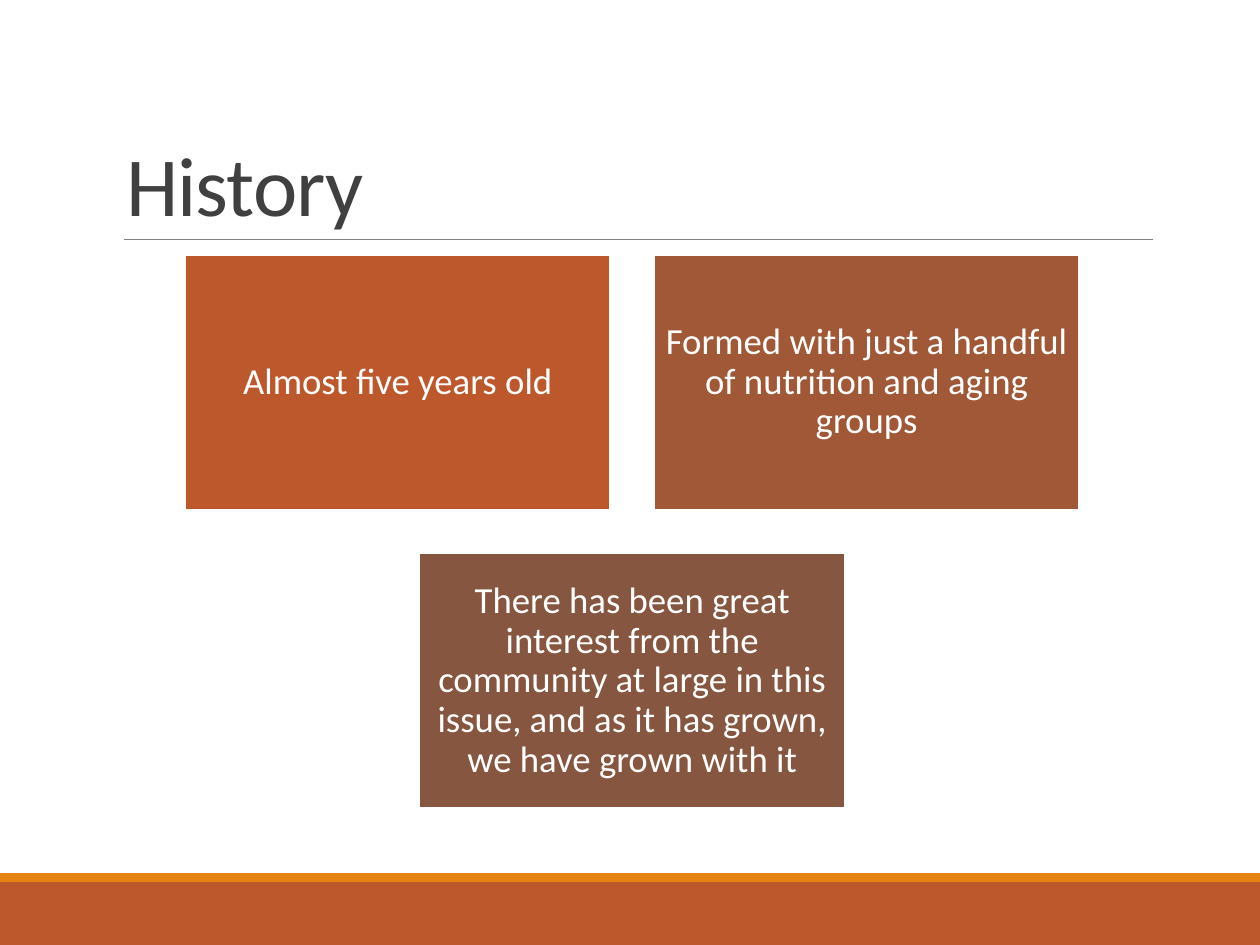
"""Build the History slide with three text cards and a footer band."""
from dataclasses import dataclass

from lxml import etree
from pptx import Presentation
from pptx.dml.color import RGBColor
from pptx.enum.shapes import MSO_CONNECTOR, MSO_SHAPE
from pptx.enum.text import MSO_ANCHOR, MSO_AUTO_SIZE, PP_ALIGN
from pptx.oxml.ns import qn
from pptx.util import Cm, Pt

RECT = MSO_SHAPE.RECTANGLE
STRAIGHT = MSO_CONNECTOR.STRAIGHT
MIDDLE, BOTTOM = MSO_ANCHOR.MIDDLE, MSO_ANCHOR.BOTTOM
CENTER, LEFT = PP_ALIGN.CENTER, PP_ALIGN.LEFT
NO_FIT = MSO_AUTO_SIZE.NONE

COLORS = {
    "rust": "BD582C", "amber": "E48312", "clay": "A05837", "brown": "865640",
    "white": "FFFFFF", "rule": "808080", "title": "404040",
}
WIDE, HIGH = 25.4, 19.05
CARD_W, CARD_H = 8.58, 5.15
STEP_X, STEP_Y = 9.45, 6.02
CARD_X, CARD_Y = 3.73, 5.13
INSET = Cm(0.22)
FRAME = {"word_wrap": True, "auto_size": NO_FIT}
INSETS = dict.fromkeys(
    ("margin_left", "margin_right", "margin_top", "margin_bottom"), INSET)


@dataclass
class Card:
    """A text card placed by column and row of the grid."""
    text: str
    fill: str
    col: float
    row: int


@dataclass
class Band:
    """A full-width footer band."""
    top: float
    high: float
    fill: str


CARDS = [
    Card("Almost five years old", "rust", 0, 0),
    Card("Formed with just a handful of nutrition and aging groups", "clay", 1, 0),
    Card("There has been great interest from the community at large in this "
         "issue, and as it has grown, we have grown with it", "brown", 0.5, 1),
]
BANDS = [Band(17.78, 1.27, "rust"), Band(17.6, 0.18, "amber")]


def paint(name: str) -> RGBColor:
    """Return the named colour."""
    return RGBColor.from_string(COLORS[name])


def apply(item, values: dict) -> None:
    """Set each attribute in the dict."""
    for key, value in values.items():
        setattr(item, key, value)


def write(frame, text: str, size: int, color: str, para: dict, box: dict):
    """Fill a text frame with one styled run and return the run."""
    apply(frame, FRAME | box)
    line = frame.paragraphs[0]
    apply(line, para)
    run = line.add_run()
    run.text = text
    apply(run.font, {"name": "Calibri", "size": Pt(size)})
    run.font.color.rgb = paint(color)
    return run


def add_box(slide, left: float, top: float, wide: float, high: float, fill: str):
    """Add a plain filled rectangle."""
    box = slide.shapes.add_shape(RECT, Cm(left), Cm(top), Cm(wide), Cm(high))
    box.shadow.inherit = False
    box.fill.solid()
    box.fill.fore_color.rgb = paint(fill)
    box.line.fill.background()
    return box


def add_card(slide, card: Card) -> None:
    """Add one card with its text."""
    box = add_box(slide, CARD_X + card.col * STEP_X, CARD_Y + card.row * STEP_Y,
                  CARD_W, CARD_H, card.fill)
    box.line.color.rgb = paint("white")
    box.line.width = Pt(1.25)
    write(box.text_frame, card.text, 21, "white",
          {"alignment": CENTER, "line_spacing": 0.9},
          INSETS | {"vertical_anchor": MIDDLE})


def add_rule(slide) -> None:
    """Add the thin line below the title."""
    rule = slide.shapes.add_connector(
        STRAIGHT, Cm(2.49), Cm(4.83), Cm(23.24), Cm(4.83))
    rule.line.color.rgb = paint("rule")
    rule.line.width = Pt(0.5)
    etree.SubElement(rule._element.spPr, qn("a:effectLst"))


def add_title(slide) -> None:
    """Place and fill the title."""
    title = slide.shapes.title
    apply(title, {"left": Cm(2.29), "top": Cm(0.79),
                  "width": Cm(20.95), "height": Cm(4.04)})
    run = write(title.text_frame, "History", 48, "title",
                {"alignment": LEFT, "line_spacing": 0.85},
                {"vertical_anchor": BOTTOM})
    run._r.get_or_add_rPr().set("spc", "-50")


def main() -> None:
    """Build and save the deck."""
    deck = Presentation()
    apply(deck, {"slide_width": Cm(WIDE), "slide_height": Cm(HIGH)})
    slide = deck.slides.add_slide(deck.slide_layouts[5])
    for band in BANDS:
        add_box(slide, 0, band.top, WIDE, band.high, band.fill)
    add_rule(slide)
    add_title(slide)
    for card in CARDS:
        add_card(slide, card)
    deck.save("out.pptx")


if __name__ == "__main__":
    main()
